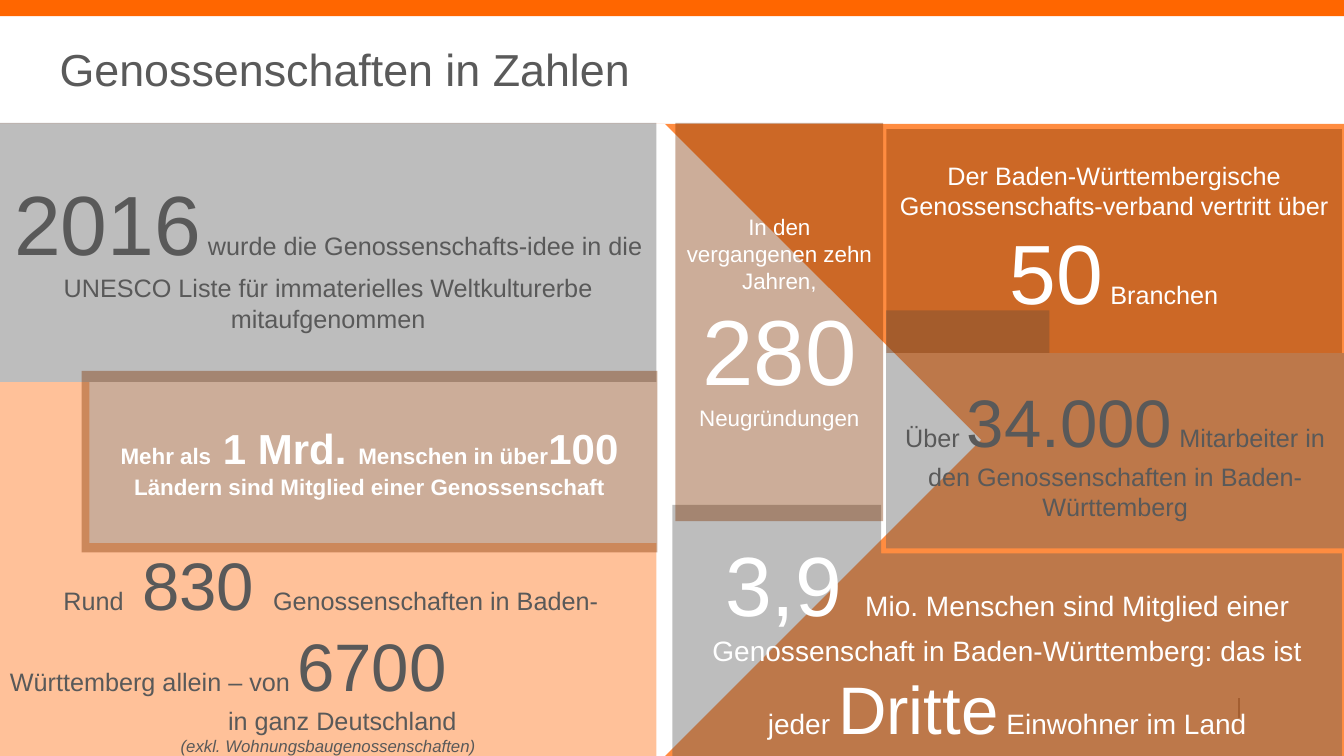
"""Build the slide 'Genossenschaften in Zahlen' with overlapping figure panels."""
from lxml import etree
from pptx import Presentation
from pptx.dml.color import RGBColor
from pptx.enum.shapes import MSO_CONNECTOR, MSO_SHAPE
from pptx.enum.text import MSO_ANCHOR, MSO_AUTO_SIZE, PP_ALIGN
from pptx.oxml.ns import qn
from pptx.util import Inches, Pt

RECT, CORNER, ARROW = MSO_SHAPE.RECTANGLE, MSO_SHAPE.CORNER, MSO_SHAPE.PENTAGON
LEFT, CENTER = PP_ALIGN.LEFT, PP_ALIGN.CENTER
TOP, MIDDLE = MSO_ANCHOR.TOP, MSO_ANCHOR.MIDDLE
NO_FIT, STRAIGHT = MSO_AUTO_SIZE.NONE, MSO_CONNECTOR.STRAIGHT
FONT = "Arial"
ORANGE, BROWN, GREY, TEXT_GREY, WHITE = "FF6600", "803300", "5A5A5A", "595959", "FFFFFF"


def rgb(value):
    return RGBColor.from_string(value)


def add_panel(kind, box, color, opacity=100, adjustments=()):
    panel = slide.shapes.add_shape(kind, *[Inches(n) for n in box])
    panel.shadow.inherit = False
    panel.line.fill.background()
    panel.fill.solid()
    panel.fill.fore_color.rgb = rgb(color)
    if opacity < 100:
        tint = panel._element.spPr.find(qn("a:solidFill"))[0]
        etree.SubElement(tint, qn("a:alpha")).set("val", str(opacity * 1000))
    for index, ratio in enumerate(adjustments):
        panel.adjustments[index] = ratio
    return panel


prs = Presentation()
prs.slide_width, prs.slide_height = Inches(13.33), Inches(7.5)
slide = prs.slides.add_slide(prs.slide_layouts[5])

heading = slide.shapes.title
heading.left, heading.top = Inches(0.59), Inches(0.47)
heading.width, heading.height = Inches(12.58), Inches(0.59)
heading_frame = heading.text_frame
heading_frame.text = "Genossenschaften in Zahlen"
heading_frame.auto_size = NO_FIT
heading_frame.word_wrap = True
heading_frame.vertical_anchor = TOP
heading_frame.margin_left = heading_frame.margin_top = heading_frame.margin_bottom = 0
heading_frame.margin_right = Inches(2.95)
heading_line = heading_frame.paragraphs[0]
heading_line.alignment = LEFT
heading_line.line_spacing = 0.9
heading_font = heading_line.runs[0].font
heading_font.name, heading_font.size = FONT, Pt(32)
heading_font.color.rgb = rgb(GREY)

add_panel(RECT, (0, 0, 13.33, 0.16), ORANGE)
footer_mark = slide.shapes.add_connector(
    STRAIGHT, Inches(12.29), Inches(7.12), Inches(12.29), Inches(6.92))
footer_mark.line.color.rgb = rgb(GREY)
footer_mark.line.width = Pt(1)
etree.SubElement(footer_mark._element.spPr, qn("a:effectLst"))

add_panel(RECT, (0, 1.23, 13.33, 6.27), ORANGE, 75)
add_panel(ARROW, (0, 1.23, 9.73, 6.27), WHITE)

# Each panel: kind, box, adjustments, fill, text colour, bold, bottom inset,
# paragraphs as (alignment, first-line indent, italic, runs of text and size).
facts = [
    (CORNER, (0, 3.79, 6.51, 3.71), (0.569, 0.239), ORANGE, TEXT_GREY, False, 0.05, [
        (LEFT, 0.53, False, [
            ("Rund", 18), (" 830 ", 48),
            ("Genossenschaften in Baden-Württemberg allein – von ", 18), ("6700", 48)]),
        (CENTER, 0.28, False, [("in ganz Deutschland", 18)]),
        (CENTER, 0, True, [("(exkl. Wohnungsbaugenossenschaften)", 12)])]),
    (CORNER, (8.79, 3.08, 4.54, 2.36), (0.82, 0.686), GREY, TEXT_GREY, False, 0.05, [
        (CENTER, 0, False, [
            ("Über ", 18), ("34.000", 48),
            (" Mitarbeiter in den Genossenschaften in Baden-Württemberg", 18)])]),
    (RECT, (0, 1.22, 6.51, 2.57), (), GREY, TEXT_GREY, False, 0.05, [
        (CENTER, 0, False, [
            ("2016", 60),
            (" wurde die Genossenschafts-idee in die UNESCO Liste für immaterielles "
             "Weltkulturerbe mitaufgenommen", 18)])]),
    (CORNER, (6.67, 5.01, 6.64, 2.5), (0.808, 0.828), GREY, WHITE, False, 0.34, [
        (CENTER, 0, False, [
            ("3,9 ", 60),
            ("Mio. Menschen sind Mitglied einer Genossenschaft in Baden-Württemberg: "
             "das ist jeder ", 20),
            ("Dritte", 48), (" Einwohner im Land", 20)])]),
    (RECT, (8.79, 1.28, 4.52, 2.22), (), BROWN, WHITE, False, 0.05, [
        (CENTER, 0, False, [
            ("Der Baden-Württembergische Genossenschafts-verband vertritt über ", 18),
            ("50", 60), (" Branchen", 18)])]),
    (RECT, (6.7, 1.22, 2.06, 3.95), (), BROWN, WHITE, False, 0.05, [
        (CENTER, 0, False, [
            ("In den vergangenen zehn Jahren, ", 16), ("280", 66),
            (" Neugründungen", 16)])]),
    (RECT, (0.81, 3.68, 5.71, 1.8), (), BROWN, WHITE, True, 0.05, [
        (CENTER, 0, False, [
            ("Mehr als", 16), (" 1 Mrd. ", 30), ("Menschen in über", 16), ("100 ", 30),
            ("Ländern sind Mitglied einer Genossenschaft", 16)])]),
]

for kind, box, ratios, fill, ink, bold, bottom_inset, paragraphs in facts:
    frame = add_panel(kind, box, fill, 40, ratios).text_frame
    frame.word_wrap = True
    frame.vertical_anchor = MIDDLE
    frame.margin_bottom = Inches(bottom_inset)
    for position, (alignment, indent, italic, pieces) in enumerate(paragraphs):
        paragraph = frame.add_paragraph() if position else frame.paragraphs[0]
        paragraph.alignment = alignment
        if indent:
            paragraph._p.get_or_add_pPr().set("indent", str(Inches(indent)))
        for words, size in pieces:
            run = paragraph.add_run()
            run.text = words
            run.font.name, run.font.size = FONT, Pt(size)
            run.font.bold, run.font.italic = bold, italic
            run.font.color.rgb = rgb(ink)

prs.save("out.pptx")
